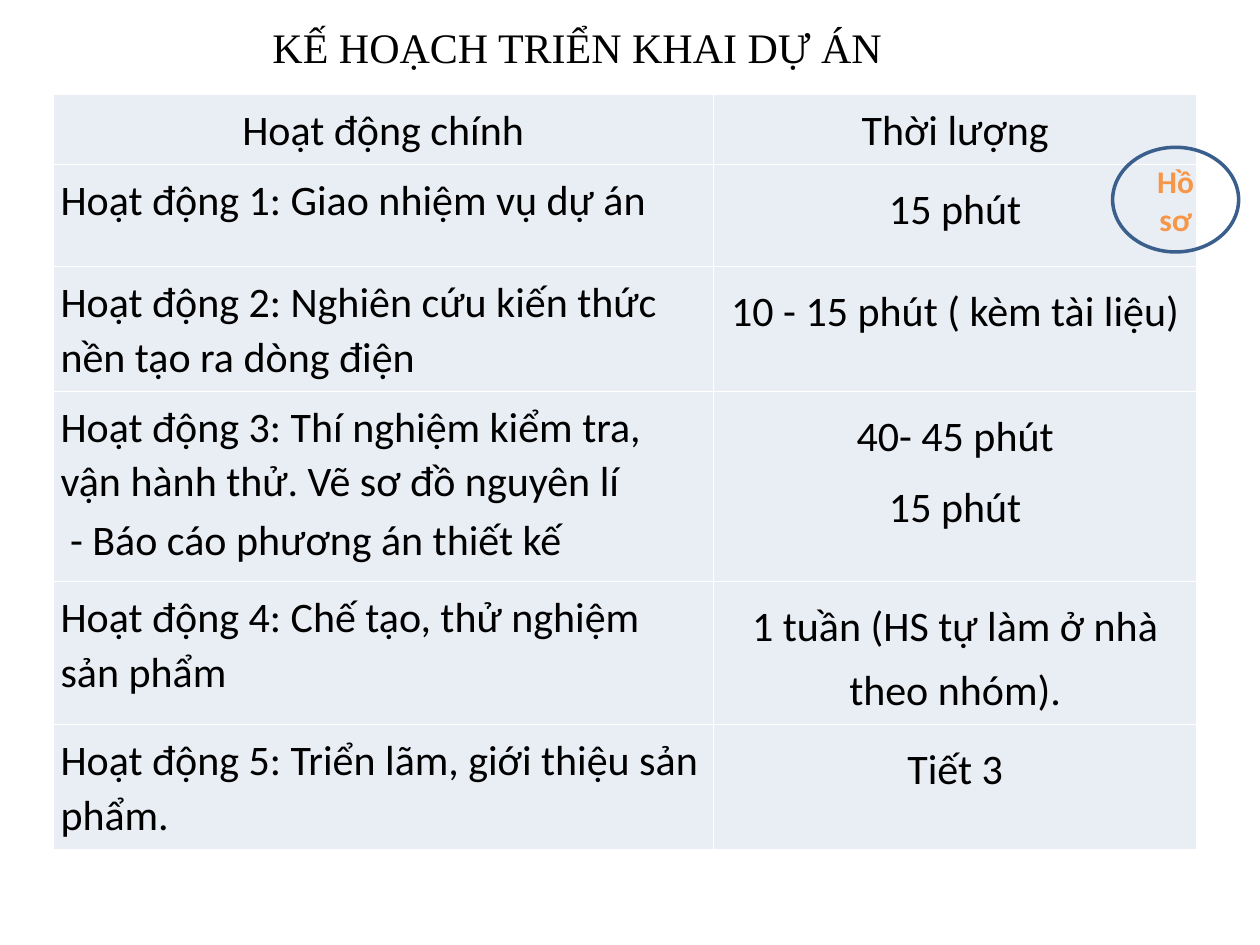
from lxml.etree import SubElement
from pptx import Presentation
from pptx.dml.color import RGBColor
from pptx.enum.shapes import MSO_SHAPE
from pptx.enum.text import MSO_ANCHOR, PP_ALIGN
from pptx.oxml.ns import qn
from pptx.util import Cm, Pt

BLACK = RGBColor(0x00, 0x00, 0x00)
ORANGE = RGBColor(0xF7, 0x96, 0x46)
OUTLINE_BLUE = RGBColor(0x3A, 0x5F, 0x8C)
CELL_FILL = RGBColor(0xE9, 0xED, 0xF4)
BORDER_HEX = "FFFFFF"

COLUMN_WIDTHS = [13.31, 9.75]
ROW_HEIGHTS = [1.19, 2.06, 2.34, 3.84, 2.34, 2.06]
HEADERS = ["Hoạt động chính", "Thời lượng"]
ACTIVITIES = [
    (["Hoạt động 1: Giao nhiệm vụ dự án"], ["15 phút"]),
    (["Hoạt động 2: Nghiên cứu kiến thức nền tạo ra dòng điện"],
     ["10 - 15 phút ( kèm tài liệu)"]),
    (["Hoạt động 3: Thí nghiệm kiểm tra, vận hành thử. Vẽ sơ đồ nguyên lí",
      " - Báo cáo phương án thiết kế"],
     ["40- 45 phút", "15 phút"]),
    (["Hoạt động 4: Chế tạo, thử nghiệm sản phẩm"],
     ["1 tuần (HS tự làm ở nhà theo nhóm)."]),
    (["Hoạt động 5: Triển lãm, giới thiệu sản phẩm."], ["Tiết 3"]),
]


def add_span(para, text, size=24, font="Calibri", color=BLACK, bold=False):
    """Add one formatted run to a paragraph."""
    span = para.add_run()
    span.text = text
    span.font.size = Pt(size)
    span.font.name = font
    span.font.color.rgb = color
    span.font.bold = bold


def add_borders(cell):
    """Draw a thin white border on every side of a cell."""
    properties = cell._tc.get_or_add_tcPr()
    for index, side in enumerate(("a:lnL", "a:lnR", "a:lnT", "a:lnB")):
        line = properties.makeelement(qn(side), {"w": str(Pt(1))})
        properties.insert(index, line)
        fill = SubElement(line, qn("a:solidFill"))
        SubElement(fill, qn("a:srgbClr"), val=BORDER_HEX)


def fill_cell(cell, lines, align, line_spacing=1.07, space_after=1):
    """Write the lines of a cell and set its look."""
    cell.margin_left = cell.margin_right = Cm(0.15)
    cell.margin_top = cell.margin_bottom = Cm(0.15)
    cell.fill.solid()
    cell.fill.fore_color.rgb = CELL_FILL
    add_borders(cell)
    frame = cell.text_frame
    for index, text in enumerate(lines):
        para = frame.add_paragraph() if index else frame.paragraphs[0]
        para.alignment = align
        para.line_spacing = line_spacing
        para.space_before = Pt(1)
        para.space_after = Pt(space_after)
        add_span(para, text)


def add_plan_table(page):
    """Add the table of activities and durations."""
    table = page.shapes.add_table(
        len(ROW_HEIGHTS), len(COLUMN_WIDTHS), Cm(1.07), Cm(1.91),
        Cm(sum(COLUMN_WIDTHS)), Cm(sum(ROW_HEIGHTS))).table
    table.first_row = table.horz_banding = False
    for column, width in zip(table.columns, COLUMN_WIDTHS):
        column.width = Cm(width)
    for row, height in zip(table.rows, ROW_HEIGHTS):
        row.height = Cm(height)
    for index, header in enumerate(HEADERS):
        fill_cell(table.cell(0, index), [header], PP_ALIGN.CENTER)
    for index, (activity, duration) in enumerate(ACTIVITIES, start=1):
        fill_cell(table.cell(index, 0), activity, PP_ALIGN.LEFT)
        fill_cell(table.cell(index, 1), duration, PP_ALIGN.CENTER, 1.25, 3)


def add_title(page, text):
    """Add the centred slide title."""
    box = page.shapes.add_textbox(Cm(2.97), Cm(0.3), Cm(16.51), Cm(2.31))
    frame = box.text_frame
    frame.word_wrap = True
    frame.vertical_anchor = MSO_ANCHOR.TOP
    frame.margin_left = Cm(1.07)
    para = frame.paragraphs[0]
    para.alignment = PP_ALIGN.CENTER
    add_span(para, text, font="Times New Roman")


def add_badge(page, text):
    """Add the outlined ellipse with its label."""
    badge = page.shapes.add_shape(
        MSO_SHAPE.OVAL, Cm(22.43), Cm(2.97), Cm(2.54), Cm(2.11))
    badge.shadow.inherit = False
    badge.fill.background()
    badge.line.color.rgb = OUTLINE_BLUE
    badge.line.width = Pt(2)
    frame = badge.text_frame
    frame.word_wrap = True
    frame.vertical_anchor = MSO_ANCHOR.MIDDLE
    para = frame.paragraphs[0]
    para.alignment = PP_ALIGN.CENTER
    add_span(para, text, size=18, color=ORANGE, bold=True)


def main():
    """Build the project plan slide and save it."""
    deck = Presentation()
    deck.slide_width, deck.slide_height = Cm(25.4), Cm(19.05)
    page = deck.slides.add_slide(deck.slide_layouts[6])
    add_plan_table(page)
    add_title(page, "KẾ HOẠCH TRIỂN KHAI DỰ ÁN")
    add_badge(page, "Hồ sơ")
    deck.save("out.pptx")


if __name__ == "__main__":
    main()
